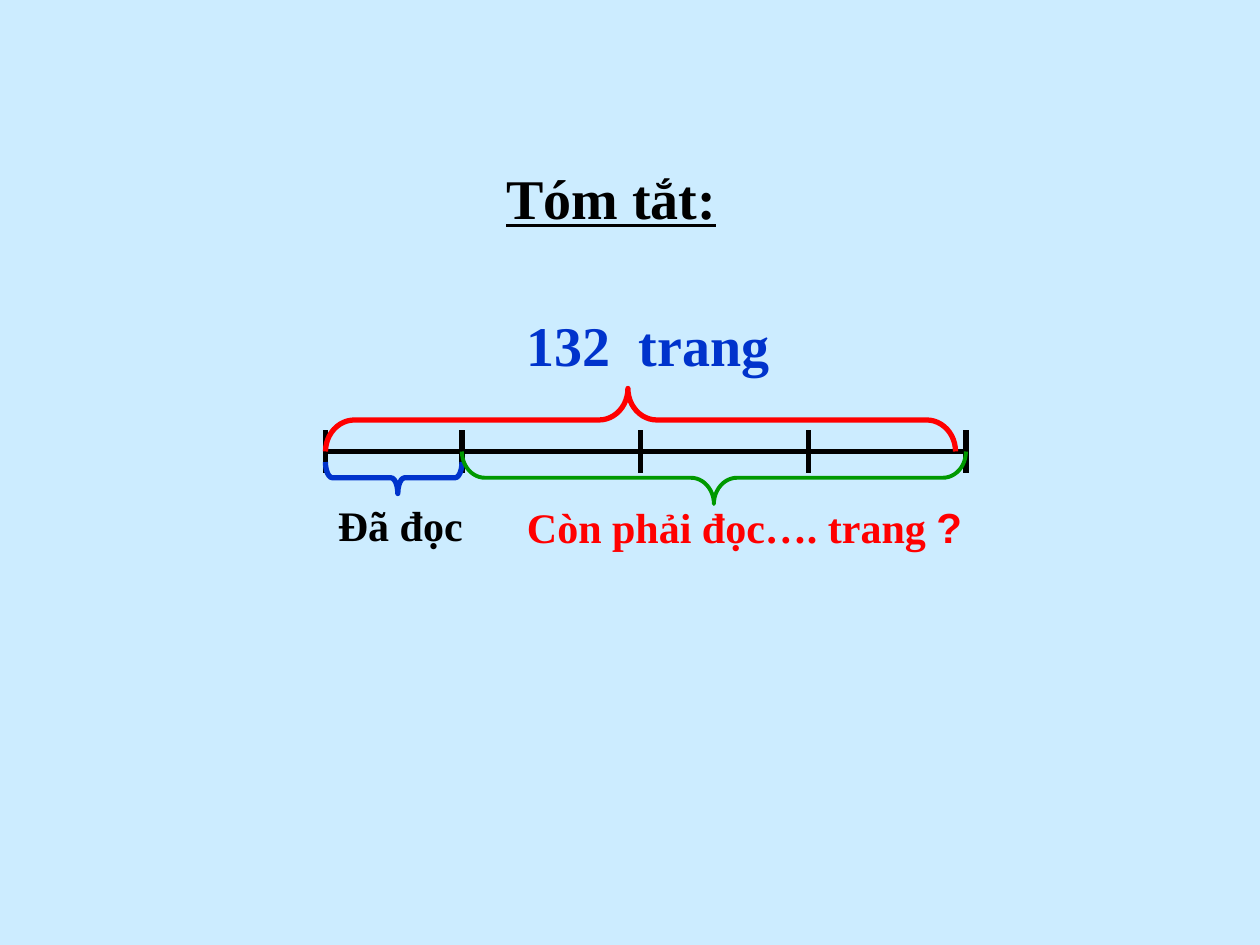
"""Build the reading problem summary: a segment bar with braces and labels."""
from typing import NamedTuple

from lxml.etree import SubElement
from pptx import Presentation
from pptx.dml.color import RGBColor as Rgb
from pptx.enum.shapes import MSO_CONNECTOR as Conn, MSO_SHAPE as Form
from pptx.enum.text import MSO_ANCHOR as Anchor, MSO_AUTO_SIZE as Auto, PP_ALIGN as Align
from pptx.oxml.ns import qn
from pptx.util import Inches, Pt

COLS, ROWS = 120, 90
WIDE, HIGH = Inches(10), Inches(7.5)
SERIF, SANS = "Times New Roman", "Arial"
BLACK, RED, BLUE, GREEN, SKY = "000000", "FF0000", "0033CC", "009900", "CCECFF"


class Brace(NamedTuple):
    """A lying brace: its box on the grid, its turn, curve, tip and line."""
    col: float
    row: float
    span: float
    depth: float
    turn: int
    curve: float
    tip: float
    hue: str
    line: float


class Label(NamedTuple):
    """A text with its box on the grid, and an optional sans-serif ending."""
    text: str
    col: float
    row: float
    span: float
    size: int
    hue: str
    tail: str = ""


TITLE = Label("Tóm tắt:", 47, 15, 23, 32, BLACK)
LABELS = [
    Label("132  trang", 49, 29, 28, 32, BLUE),
    Label("Đã đọc", 31, 47, 17, 24, BLACK),
    Label("Còn phải đọc…. trang ", 49, 47.2, 44.5, 24, RED, "?"),
]
BRACES = [
    Brace(31, 37, 60, 6, 90, 0.46, 0.52, RED, 3),
    Brace(31, 44, 13, 3, 270, 0.22, 0.53, BLUE, 3),
    Brace(44, 43, 48, 5, 270, 0.44, 0.5, GREEN, 2.25),
]
TICKS = [31, 44, 61, 77, 92]
BASE, REACH = 43, 2


def hue(code: str) -> Rgb:
    """Turn a hex string into a colour."""
    return Rgb.from_string(code)


def x(col: float) -> int:
    """Give the length of a number of columns."""
    return round(WIDE * col / COLS)


def y(row: float) -> int:
    """Give the length of a number of rows."""
    return round(HIGH * row / ROWS)


def rule(slide, col: float, row: float, end: float, foot: float) -> None:
    """Draw a straight black line between two grid points."""
    line = slide.shapes.add_connector(Conn.STRAIGHT, x(col), y(row), x(end), y(foot))
    line.line.color.rgb = hue(BLACK)
    line.line.width = Pt(3)
    SubElement(line._element.spPr, qn("a:effectLst"))


def brace(slide, item: Brace) -> None:
    """Draw an upright brace turned to lie in its box."""
    left = item.col + (item.span - item.depth) / 2
    top = item.row + (item.depth - item.span) / 2
    shape = slide.shapes.add_shape(
        Form.LEFT_BRACE, x(left), y(top), x(item.depth), y(item.span))
    shape.rotation = item.turn
    shape.adjustments[0], shape.adjustments[1] = item.curve, item.tip
    shape.shadow.inherit = False
    shape.fill.background()
    shape.line.color.rgb = hue(item.hue)
    shape.line.width = Pt(item.line)


def write(shape, item: Label) -> None:
    """Place a text shape and format its runs."""
    shape.left, shape.top = x(item.col), y(item.row)
    shape.width, shape.height = x(item.span), Pt(item.size * 1.15 + 7.2 * 1.25)
    frame = shape.text_frame
    frame.text = item.text
    frame.word_wrap = True
    frame.auto_size = Auto.SHAPE_TO_FIT_TEXT
    frame.vertical_anchor = Anchor.TOP
    para = frame.paragraphs[0]
    para.alignment = Align.LEFT
    if item.tail:
        para.add_run().text = item.tail
    for run, face in zip(para.runs, (SERIF, SANS)):
        run.font.name, run.font.size = face, Pt(item.size)
        run.font.bold = True
        run.font.color.rgb = hue(item.hue)


def main() -> None:
    """Build and save the slide."""
    deck = Presentation()
    deck.slide_width, deck.slide_height = WIDE, HIGH
    slide = deck.slides.add_slide(deck.slide_layouts[5])
    slide.background.fill.solid()
    slide.background.fill.fore_color.rgb = hue(SKY)
    head = slide.shapes.title
    write(head, TITLE)
    head.text_frame.paragraphs[0].runs[0].font.underline = True
    rule(slide, TICKS[0], BASE, TICKS[-1], BASE)
    for col in TICKS:
        rule(slide, col, BASE - REACH, col, BASE + REACH)
    for item in BRACES:
        brace(slide, item)
    for item in LABELS:
        write(slide.shapes.add_textbox(0, 0, 0, 0), item)
    deck.save("out.pptx")


if __name__ == "__main__":
    main()
